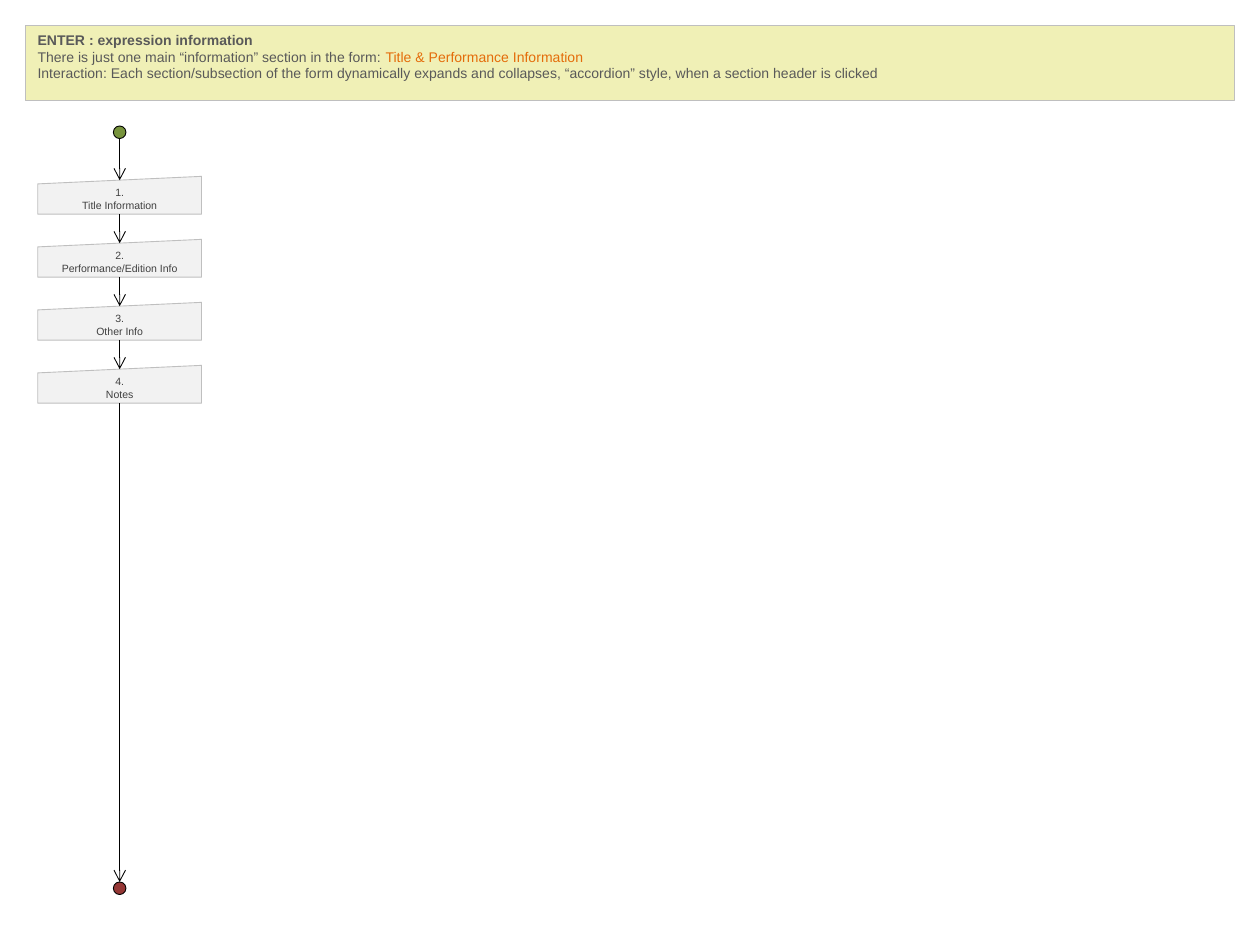
"""Builds the flow slide for entering expression information."""
from dataclasses import dataclass

from lxml import etree
from pptx import Presentation
from pptx.dml.color import RGBColor
from pptx.enum.shapes import MSO_CONNECTOR, MSO_SHAPE
from pptx.enum.text import MSO_ANCHOR, PP_ALIGN
from pptx.oxml.ns import qn
from pptx.util import Inches, Pt

OVAL = MSO_SHAPE.OVAL
RECTANGLE = MSO_SHAPE.RECTANGLE
MANUAL_INPUT = MSO_SHAPE.FLOWCHART_MANUAL_INPUT
STRAIGHT = MSO_CONNECTOR.STRAIGHT
TOP, MIDDLE = MSO_ANCHOR.TOP, MSO_ANCHOR.MIDDLE
LEFT, CENTER = PP_ALIGN.LEFT, PP_ALIGN.CENTER


@dataclass(frozen=True)
class Theme:
    font: str = "Arial"
    banner_size: float = 8
    step_size: float = 6
    line_width: float = 0.5
    banner_fill: str = "F0F0B6"
    banner_text: str = "595959"
    accent: str = "E46C0A"
    step_fill: str = "F2F2F2"
    step_text: str = "404040"
    border: str = "BFBFBF"
    ink: str = "000000"
    start: str = "77933C"
    end: str = "953735"


class FlowSlide:
    def __init__(self, slide, theme):
        self.slide = slide
        self.theme = theme

    def box(self, kind, left, top, width, height, fill, border):
        shape = self.slide.shapes.add_shape(
            kind, Inches(left), Inches(top), Inches(width), Inches(height))
        shape.shadow.inherit = False
        shape.fill.solid()
        shape.fill.fore_color.rgb = RGBColor.from_string(fill)
        shape.line.color.rgb = RGBColor.from_string(border)
        shape.line.width = Pt(self.theme.line_width)
        return shape

    def style(self, paragraph, size, color, alignment, bold=False):
        paragraph.alignment = alignment
        font = paragraph.font
        font.name = self.theme.font
        font.size = Pt(size)
        font.bold = bold
        font.color.rgb = RGBColor.from_string(color)

    def dot(self, center, top, diameter, fill):
        self.box(OVAL, center - diameter / 2, top, diameter, diameter,
                 fill, self.theme.ink)

    def banner(self, left, top, width, height, lines):
        theme = self.theme
        shape = self.box(RECTANGLE, left, top, width, height,
                         theme.banner_fill, theme.border)
        frame = shape.text_frame
        frame.vertical_anchor = TOP
        for index, (text, highlight) in enumerate(lines):
            paragraph = frame.add_paragraph() if index else frame.paragraphs[0]
            self.style(paragraph, theme.banner_size, theme.banner_text, LEFT,
                       bold=index == 0)
            paragraph.add_run().text = text
            if highlight:
                run = paragraph.add_run()
                run.text = highlight
                run.font.color.rgb = RGBColor.from_string(theme.accent)

    def step(self, center, top, width, height, text):
        theme = self.theme
        shape = self.box(MANUAL_INPUT, center - width / 2, top, width, height,
                         theme.step_fill, theme.border)
        shape.text_frame.vertical_anchor = MIDDLE
        paragraph = shape.text_frame.paragraphs[0]
        paragraph.text = text
        self.style(paragraph, theme.step_size, theme.step_text, CENTER)

    def arrow(self, center, top, bottom):
        connector = self.slide.shapes.add_connector(
            STRAIGHT, Inches(center), Inches(top), Inches(center), Inches(bottom))
        connector.line.color.rgb = RGBColor.from_string(self.theme.ink)
        connector.line.width = Pt(self.theme.line_width)
        properties = connector.line._get_or_add_ln()
        etree.SubElement(properties, qn("a:tailEnd"), type="arrow")
        etree.SubElement(connector._element.spPr, qn("a:effectLst"))


def main():
    presentation = Presentation()
    presentation.slide_width = Inches(10)
    presentation.slide_height = Inches(7.5)
    theme = Theme()
    slide = presentation.slides.add_slide(presentation.slide_layouts[6])
    flow = FlowSlide(slide, theme)

    flow.banner(0.2, 0.2, 9.6, 0.6, [
        ("ENTER : expression information", ""),
        ("There is just one main “information” section in the form: ",
         "Title & Performance Information"),
        ("Interaction: Each section/subsection of the form dynamically expands "
         "and collapses, “accordion” style, when a section header is clicked", ""),
    ])

    center, diameter = 0.95, 0.1
    start_top, end_top = 1, 7
    first_top, pitch, width, height = 1.4, 0.5, 1.3, 0.3
    slant_drop = 0.03
    names = ["Title Information", "Performance/Edition Info", "Other Info", "Notes"]

    flow.dot(center, start_top, diameter, theme.start)
    flow.dot(center, end_top, diameter, theme.end)
    previous_bottom = start_top + diameter
    for index, name in enumerate(names):
        top = first_top + index * pitch
        flow.step(center, top, width, height, f"{index + 1}.\n{name}")
        flow.arrow(center, previous_bottom, top + slant_drop)
        previous_bottom = top + height
    flow.arrow(center, previous_bottom, end_top)

    presentation.save("out.pptx")


if __name__ == "__main__":
    main()
